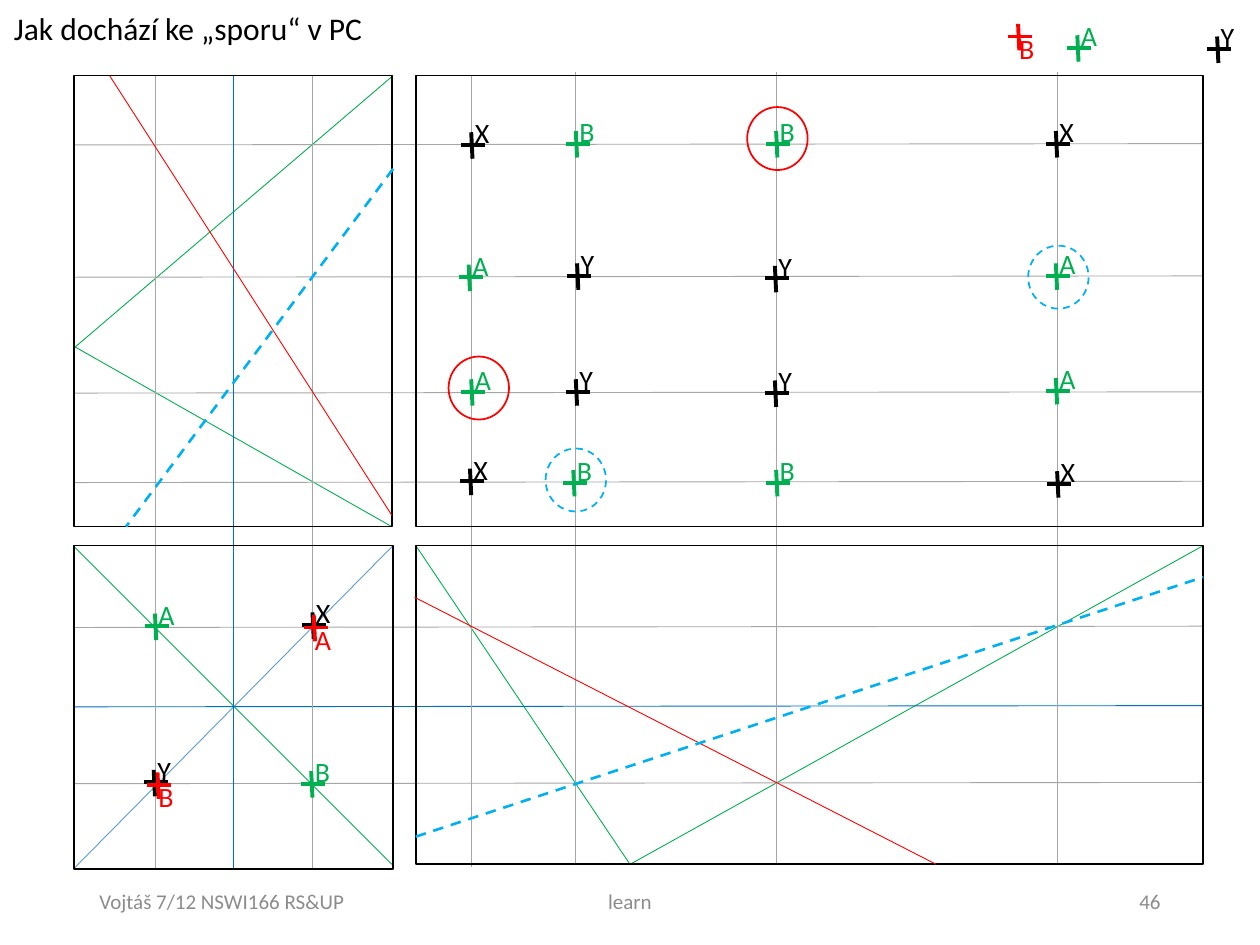
"""Build the slide on how a conflict arises in PC."""
from dataclasses import dataclass

import pptx
import pptx.util
import pptx.dml.color
import pptx.enum.dml
import pptx.enum.shapes
import pptx.enum.text
import pptx.oxml.ns
from lxml import etree

Inches = pptx.util.Inches
Align = pptx.enum.text.PP_ALIGN
Anchor = pptx.enum.text.MSO_ANCHOR
Shape = pptx.enum.shapes.MSO_SHAPE

COLORS = {
    "green": "00B050", "blue": "5B9BD5", "axis": "0070C0", "grey": "A6A6A6",
    "black": "000000", "red": "FF0000", "cyan": "00B0F0", "footer": "8C8C8C",
}
LEFT, RIGHT, TOP, BOTTOM = 0.59, 9.55, 0.6, 6.86
RING_WIDTH, RING_HEIGHT = 0.48, 0.5


@dataclass(frozen=True)
class Stroke:
    """A straight line between two points."""
    x1: float
    y1: float
    x2: float
    y2: float
    color: str
    weight: float = 0.5
    dashed: bool = False


@dataclass(frozen=True)
class Outline:
    """An unfilled rectangle or ellipse."""
    kind: Shape
    left: float
    top: float
    width: float
    height: float
    color: str
    dashed: bool = False


@dataclass(frozen=True)
class Mark:
    """A small cross with a letter; left is the start of its bar."""
    letter: str
    left: float
    y: float
    color: str


@dataclass(frozen=True)
class Footer:
    """A line of text at the bottom of the slide."""
    text: str
    left: float
    width: float
    align: Align


DIAGONALS = [
    Stroke(0.59, 4.34, 3.11, 6.86, "green"),
    Stroke(0.59, 6.89, 3.12, 4.33, "blue"),
    Stroke(3.3, 4.33, 5, 6.86, "green"),
    Stroke(5, 6.86, 9.55, 4.33, "green"),
    Stroke(3.12, 0.6, 0.59, 2.76, "green"),
    Stroke(0.59, 2.75, 3.11, 4.18, "green"),
]
ROWS = [
    (4.98, "grey"), (6.22, "grey"), (5.61, "axis"), (1.15, "grey"),
    (2.2, "grey"), (3.12, "grey"), (3.83, "grey"),
]
COLUMNS = [
    (1.23, TOP, 6.89, "grey"), (2.48, TOP, 6.9, "grey"),
    (1.85, TOP, 6.89, "axis"), (3.74, TOP, 6.88, "grey"),
    (4.57, 0.57, BOTTOM, "grey"), (6.16, 0.57, BOTTOM, "grey"),
    (8.39, 0.57, BOTTOM, "grey"),
]
PANELS = [
    Outline(Shape.RECTANGLE, 0.59, 4.33, 2.53, 2.57, "black"),
    Outline(Shape.RECTANGLE, 0.59, 0.6, 2.52, 3.58, "black"),
    Outline(Shape.RECTANGLE, 3.3, 0.6, 6.25, 3.58, "black"),
    Outline(Shape.RECTANGLE, 3.3, 4.33, 6.25, 2.53, "black"),
]
MARKS = [
    Mark("A", 1.15, 4.97, "green"), Mark("A", 8.47, 0.38, "green"),
    Mark("B", 2.39, 6.22, "green"), Mark("B", 4.47, 3.83, "green"),
    Mark("B", 6.08, 3.83, "green"), Mark("B", 6.08, 1.14, "green"),
    Mark("B", 4.49, 1.14, "green"), Mark("A", 3.64, 2.2, "green"),
    Mark("A", 3.66, 3.11, "green"), Mark("A", 8.3, 3.1, "green"),
    Mark("A", 8.3, 2.19, "green"), Mark("Y", 9.58, 0.39, "black"),
    Mark("X", 2.4, 4.96, "black"), Mark("Y", 1.14, 6.21, "black"),
    Mark("X", 3.66, 1.15, "black"), Mark("X", 3.65, 3.82, "black"),
    Mark("X", 8.31, 3.84, "black"), Mark("X", 8.3, 1.14, "black"),
    Mark("Y", 4.5, 2.19, "black"), Mark("Y", 4.49, 3.11, "black"),
    Mark("Y", 6.07, 3.12, "black"), Mark("Y", 6.07, 2.21, "black"),
    Mark("B", 8, 0.29, "red"), Mark("A", 2.41, 4.98, "red"),
    Mark("B", 1.17, 6.23, "red"),
]
USER_LINES = [
    Stroke(3.11, 4.09, 0.87, 0.6, "red"),
    Stroke(3.29, 4.74, 7.43, 6.86, "red"),
    Stroke(3.3, 6.64, 9.55, 4.58, "cyan", 1.5, True),
    Stroke(3.12, 1.34, 1, 4.18, "cyan", 1.5, True),
]
RINGS = [
    Outline(Shape.OVAL, left, top, RING_WIDTH, RING_HEIGHT, color, color == "cyan")
    for left, top, color in [
        (3.56, 2.83, "red"), (5.93, 0.85, "red"),
        (8.16, 1.95, "cyan"), (4.33, 3.56, "cyan"),
    ]
]
FOOTERS = [
    Footer("Vojtáš 7/12 NSWI166 RS&UP", 0.69, 2.25, Align.LEFT),
    Footer("learn", 3.31, 3.38, Align.CENTER),
    Footer("46", 7.06, 2.25, Align.RIGHT),
]


def rgb(name: str) -> pptx.dml.color.RGBColor:
    """Return a named colour."""
    return pptx.dml.color.RGBColor.from_string(COLORS[name])


def style_line(line, color: str, weight: float, dashed: bool) -> None:
    """Set colour, weight and dash of a line."""
    line.color.rgb = rgb(color)
    line.width = pptx.util.Pt(weight)
    if dashed:
        line.dash_style = pptx.enum.dml.MSO_LINE.DASH


def draw_stroke(page, stroke: Stroke) -> None:
    """Draw one straight line without a shadow."""
    connector = page.shapes.add_connector(
        pptx.enum.shapes.MSO_CONNECTOR.STRAIGHT,
        Inches(stroke.x1), Inches(stroke.y1), Inches(stroke.x2), Inches(stroke.y2))
    style_line(connector.line, stroke.color, stroke.weight, stroke.dashed)
    etree.SubElement(connector._element.spPr, pptx.oxml.ns.qn("a:effectLst"))


def draw_outline(page, outline: Outline) -> None:
    """Draw one unfilled shape."""
    shape = page.shapes.add_shape(
        outline.kind, Inches(outline.left), Inches(outline.top),
        Inches(outline.width), Inches(outline.height))
    shape.shadow.inherit = False
    shape.fill.background()
    style_line(shape.line, outline.color, 1, outline.dashed)


def write(box, text: str, size: float, color: str, align: Align = Align.LEFT,
          anchor: Anchor = Anchor.TOP, wrap: bool = False) -> None:
    """Fill a box with one formatted paragraph."""
    frame = box.text_frame
    frame.text = text
    frame.word_wrap = wrap
    frame.vertical_anchor = anchor
    fit = pptx.enum.text.MSO_AUTO_SIZE
    frame.auto_size = fit.NONE if wrap else fit.SHAPE_TO_FIT_TEXT
    para = frame.paragraphs[0]
    para.alignment = align
    para.font.name = "Calibri"
    para.font.size = pptx.util.Pt(size)
    para.font.color.rgb = rgb(color)


def draw_mark(page, mark: Mark) -> None:
    """Draw a cross and its letter, which sits lower when red."""
    left, y = mark.left, mark.y
    draw_stroke(page, Stroke(left, y, left + 0.19, y, mark.color, 2.25))
    draw_stroke(page, Stroke(left + 0.08, y - 0.1, left + 0.09, y + 0.11, mark.color, 2.25))
    shift, rise = (-0.01, 0.09) if mark.color == "red" else (0.01, 0.28)
    box = page.shapes.add_textbox(
        Inches(left + shift), Inches(y - rise), Inches(0.33), Inches(0.37))
    write(box, mark.letter, 16, mark.color)


def main() -> None:
    """Assemble and save the deck."""
    deck = pptx.Presentation()
    deck.slide_width, deck.slide_height = Inches(10), Inches(7.5)
    page = deck.slides.add_slide(deck.slide_layouts[5])
    title = page.shapes.title
    title.left, title.top = Inches(0.01), Inches(0.02)
    title.width, title.height = Inches(3), Inches(0.4)
    write(title, "Jak dochází ke „sporu“ v PC", 18, "black")

    rows = [Stroke(LEFT, y, RIGHT, y - 0.01, color) for y, color in ROWS]
    columns = [Stroke(x, top, x, bottom, color) for x, top, bottom, color in COLUMNS]
    for stroke in DIAGONALS + rows + columns:
        draw_stroke(page, stroke)
    for panel in PANELS:
        draw_outline(page, panel)
    for mark in MARKS:
        draw_mark(page, mark)
    for stroke in USER_LINES:
        draw_stroke(page, stroke)
    for ring in RINGS:
        draw_outline(page, ring)
    for footer in FOOTERS:
        box = page.shapes.add_textbox(
            Inches(footer.left), Inches(6.95), Inches(footer.width), Inches(0.4))
        write(box, footer.text, 12, "footer", footer.align, Anchor.MIDDLE, True)
    deck.save("out.pptx")


if __name__ == "__main__":
    main()
